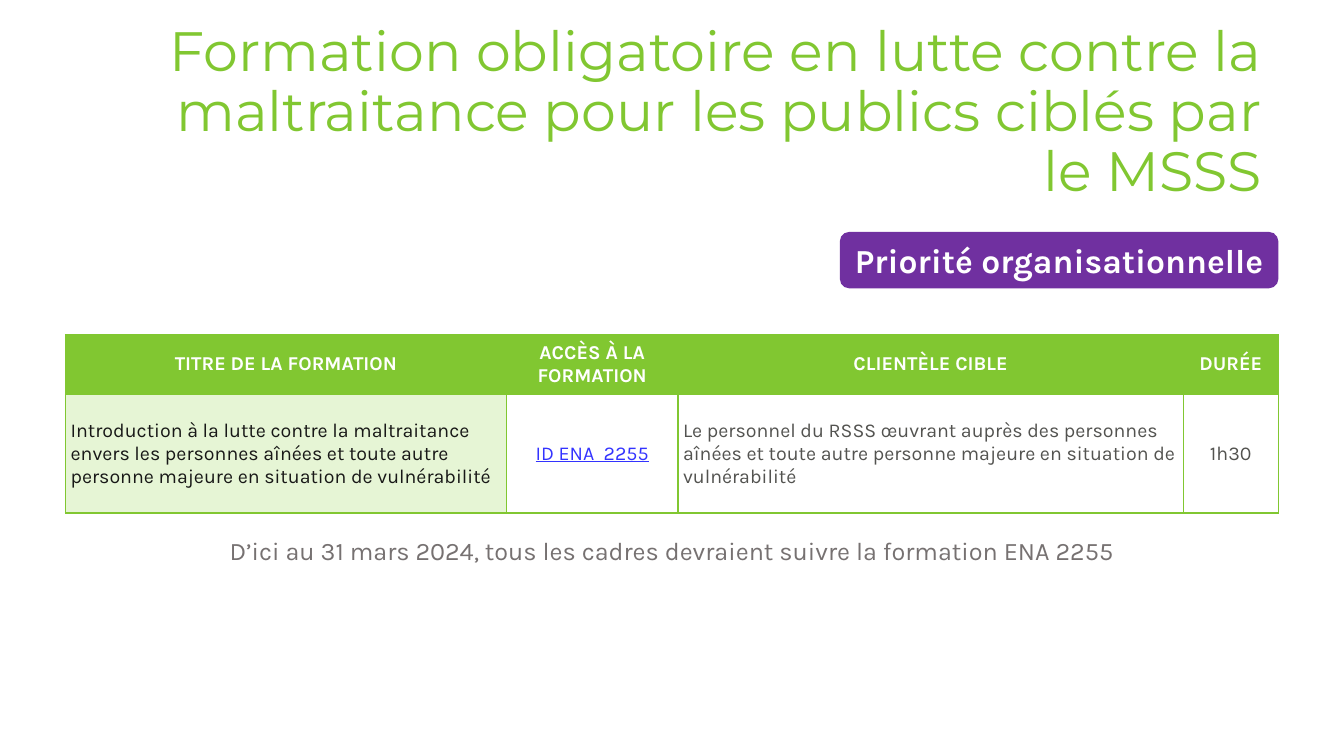
from lxml.etree import SubElement
from pptx import Presentation
from pptx.dml.color import RGBColor
from pptx.enum.shapes import MSO_SHAPE
from pptx.enum.text import MSO_ANCHOR, PP_ALIGN
from pptx.oxml.ns import qn
from pptx.util import Inches, Pt

HUES = {
    "green": "81C731", "pale": "E6F5D5", "violet": "7030A0", "white": "FFFFFF",
    "ink": "181817", "link": "3333FF", "dark": "535350", "gray": "767171",
}
LEFT, MID, RIGHT = PP_ALIGN.LEFT, PP_ALIGN.CENTER, PP_ALIGN.RIGHT


def hue(name):
    return RGBColor.from_string(HUES[name])


class Deck:
    """Places elements by percentages of the slide's width and height."""

    def __init__(self, wide, high):
        self.show = Presentation()
        self.show.slide_width, self.show.slide_height = Inches(wide), Inches(high)
        self.slide = self.show.slides.add_slide(self.show.slide_layouts[6])

    def across(self, share):
        return round(self.show.slide_width * share / 100)

    def down(self, share):
        return round(self.show.slide_height * share / 100)

    def area(self, left, top, wide, high):
        return self.across(left), self.down(top), self.across(wide), self.down(high)

    def label(self, frame, words, color, align=MID, para={}, **style):
        frame.word_wrap = True
        line = frame.paragraphs[0]
        for key, value in {"alignment": align, **para}.items():
            setattr(line, key, value)
        run = line.add_run()
        run.text = words
        run.font.color.rgb = hue(color)
        for key, value in {"name": "Karla", **style}.items():
            setattr(run.font, key, value)

    def text(self, area, words, color, anchor=MSO_ANCHOR.TOP, **style):
        frame = self.slide.shapes.add_textbox(*self.area(*area)).text_frame
        frame.vertical_anchor = anchor
        self.label(frame, words, color, **style)

    def badge(self, area, words, fill, color, **style):
        shape = self.slide.shapes.add_shape(
            MSO_SHAPE.ROUNDED_RECTANGLE, *self.area(*area))
        shape.shadow.inherit = False
        shape.fill.solid()
        shape.fill.fore_color.rgb = hue(fill)
        shape.line.fill.background()
        self.label(shape.text_frame, words, color, **style)

    def edge(self, cell, color):
        """Draws a one-point line on all four sides of a cell."""
        props = cell._tc.get_or_add_tcPr()
        for spot, side in enumerate(("lnL", "lnR", "lnT", "lnB")):
            line = SubElement(props, qn(f"a:{side}"), w=str(Pt(1)))
            fill = SubElement(line, qn("a:solidFill"))
            SubElement(fill, qn("a:srgbClr"), val=HUES[color])
            props.insert(spot, line)

    def table(self, left, top, cols, rows, cells):
        area = self.area(left, top, sum(cols), sum(rows))
        grid = self.slide.shapes.add_table(len(rows), len(cols), *area).table
        for col, share in zip(grid.columns, cols):
            col.width = self.across(share)
        for row, share in zip(grid.rows, rows):
            row.height = self.down(share)
        form = {
            "vertical_anchor": MSO_ANCHOR.MIDDLE,
            "margin_left": Inches(0.05), "margin_right": Inches(0.05),
            "margin_top": 0, "margin_bottom": 0,
        }
        for cell, (words, fill, color, style) in zip(grid.iter_cells(), cells):
            for key, value in form.items():
                setattr(cell, key, value)
            if fill:
                cell.fill.solid()
                cell.fill.fore_color.rgb = hue(fill)
            else:
                cell.fill.background()
            self.edge(cell, "green")
            self.label(cell.text_frame, words, color, size=Pt(14),
                       para={"space_after": Pt(4)}, **style)


def main():
    deck = Deck(13.33, 7.5)
    deck.text(
        (11.4, 5.33, 83.2, 19.33),
        "Formation obligatoire en lutte contre la maltraitance "
        "pour les publics ciblés par le MSSS",
        "green", MSO_ANCHOR.MIDDLE, align=RIGHT, para={"line_spacing": 0.9},
        name="Montserrat", size=Pt(39.6))
    heads = ["TITRE DE LA FORMATION", "ACCÈS À LA FORMATION",
             "CLIENTÈLE CIBLE", "DURÉE"]
    cells = [(head, "green", "white", {"bold": True}) for head in heads]
    cells += [
        ("Introduction à la lutte contre la maltraitance envers les personnes "
         "aînées et toute autre personne majeure en situation de vulnérabilité",
         "pale", "ink", {"align": LEFT, "bold": False}),
        ("ID ENA  2255", None, "link", {"underline": True, "bold": False}),
        ("Le personnel du RSSS œuvrant auprès des personnes aînées et toute "
         "autre personne majeure en situation de vulnérabilité",
         None, "dark", {"align": LEFT, "bold": False}),
        ("1h30", None, "dark", {"bold": False}),
    ]
    deck.table(4.88, 44.27, [32.8, 12.77, 37.6, 7.07], [7.87, 15.73], cells)
    deck.badge((62.49, 30.67, 32.63, 7.47), "Priorité organisationnelle",
               "violet", "white", size=Pt(24), bold=True)
    deck.text(
        (16.35, 70.13, 67.29, 5.33),
        "D’ici au 31 mars 2024, tous les cadres devraient suivre "
        "la formation ENA 2255",
        "gray", size=Pt(18))
    deck.show.save("out.pptx")


if __name__ == "__main__":
    main()
